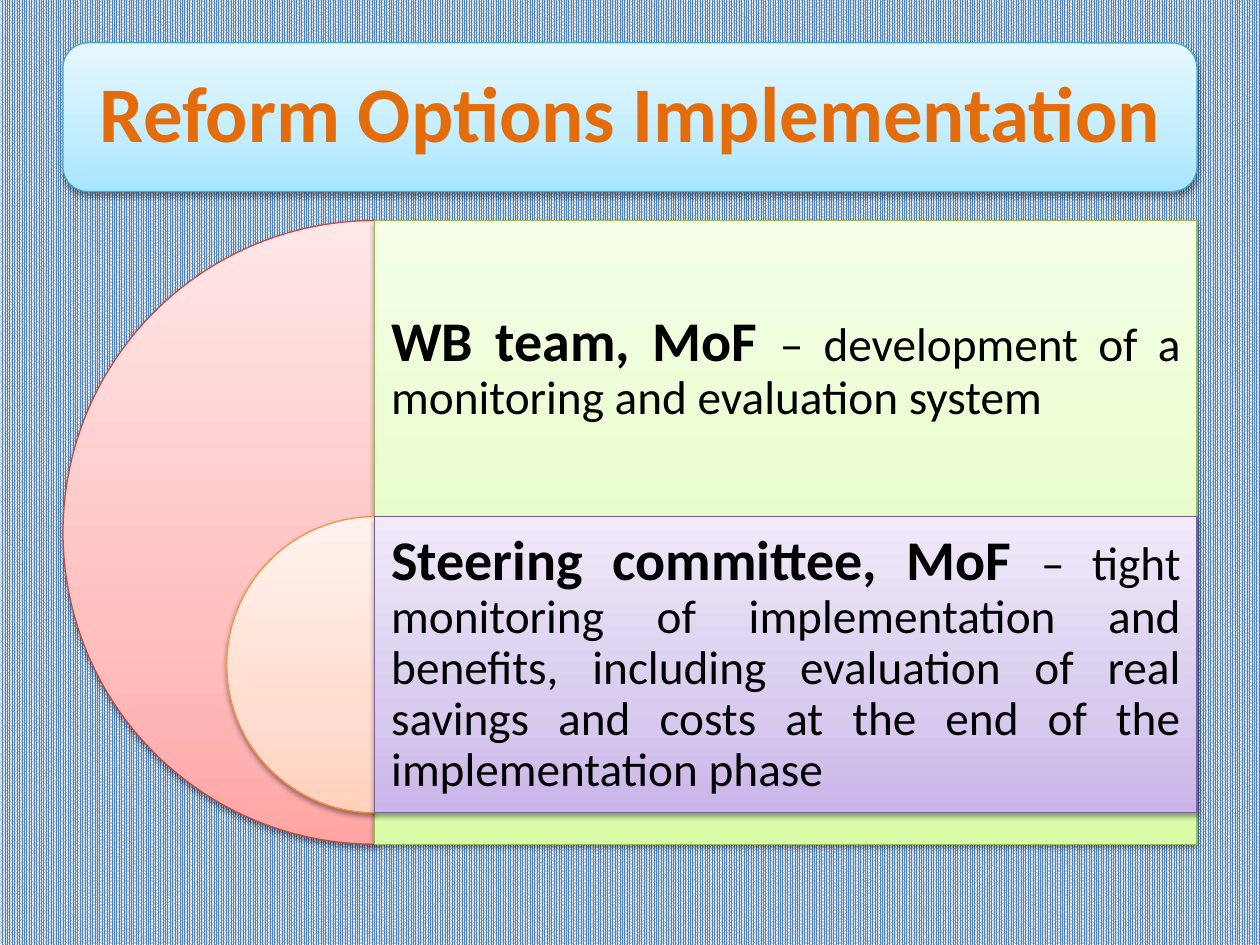
"""Build the reform options implementation slide."""
from pptx import Presentation, util as u
from pptx.dml.color import RGBColor
from pptx.enum import dml, shapes, text
from pptx.oxml import parse_xml
from pptx.oxml.ns import nsdecls

BLUE = RGBColor(0x4F, 0x81, 0xBD)
WHITE = RGBColor(0xFF, 0xFF, 0xFF)
ORANGE = RGBColor(0xE4, 0x6C, 0x0A)
BLACK = RGBColor(0, 0, 0)
TEAL_LINE = RGBColor(0x46, 0xAA, 0xC5)
RED_LINE = RGBColor(0xBF, 0x4C, 0x48)
GREEN_LINE = RGBColor(0x98, 0xB9, 0x55)
AMBER_LINE = RGBColor(0xF6, 0x92, 0x40)
PURPLE_LINE = RGBColor(0x7D, 0x60, 0xA0)
TEAL = [RGBColor.from_string(c) for c in ("A7E6FF", "C1EDFF", "E7F8FF")]
RED = [RGBColor.from_string(c) for c in ("FFA6A5", "FFC0BF", "FFE7E7")]
GREEN = [RGBColor.from_string(c) for c in ("DAFDA7", "E4FCC2", "F5FFE7")]
AMBER = [RGBColor.from_string(c) for c in ("FFD2BD", "FFDED0", "FFF2ED")]
PURPLE = [RGBColor.from_string(c) for c in ("C9B5E8", "D8CBEE", "F0EAF9")]

TITLE = "Reform Options Implementation"
LEVELS = [
    dict(lead="WB team, MoF ",
         detail="– development of a monitoring and evaluation system",
         size=4.95, pie=(RED, RED_LINE), panel=(GREEN, GREEN_LINE)),
    dict(lead="Steering committee, MoF ",
         detail="– tight monitoring of implementation and benefits, including "
                "evaluation of real savings and costs at the end of the "
                "implementation phase",
         size=2.35, pie=(AMBER, AMBER_LINE), panel=(PURPLE, PURPLE_LINE)),
]
LEFT, RIGHT, TOP, ROW = 0.5, 9.5, 1.75, 2.35
CENTER = LEFT + LEVELS[0]["size"] / 2
STOPS = (0, 35000, 100000)


def add_panel(s, kind, box, colors, line):
    sp = s.shapes.add_shape(kind, *map(u.Inches, box))
    sp.fill.gradient()
    stops = "".join(f'<a:gs pos="{pos}"><a:srgbClr val="{c}"/></a:gs>'
                    for pos, c in zip(STOPS, colors))
    old = sp._element.spPr.find(".//{*}gradFill")
    old.getparent().replace(old, parse_xml(
        f'<a:gradFill {nsdecls("a")} rotWithShape="1"><a:gsLst>{stops}</a:gsLst>'
        '<a:lin ang="16200000" scaled="0"/></a:gradFill>'))
    sp.line.color.rgb = line
    sp.line.width = u.Pt(0.75)
    sp.shadow.inherit = False
    sp._element.spPr.find("{*}effectLst").append(parse_xml(
        f'<a:outerShdw {nsdecls("a")} blurRad="40000" dist="20000" dir="5400000" '
        'rotWithShape="0"><a:srgbClr val="000000"><a:alpha val="38000"/>'
        '</a:srgbClr></a:outerShdw>'))
    return sp


def write(sp, runs, align, inset):
    tf = sp.text_frame
    tf.word_wrap = True
    tf.auto_size = text.MSO_AUTO_SIZE.NONE
    tf.vertical_anchor = text.MSO_ANCHOR.MIDDLE
    tf.margin_left = tf.margin_right = u.Inches(inset)
    tf.margin_top = tf.margin_bottom = u.Inches(inset)
    p = tf.paragraphs[0]
    p.alignment = align
    p.line_spacing = 0.9
    for words, size, bold, color in runs:
        r = p.add_run()
        r.text = words
        r.font.name = "Calibri"
        r.font.size = u.Pt(size)
        r.font.bold = bold
        r.font.color.rgb = color


def add_title(s):
    add_panel(s, shapes.MSO_SHAPE.ROUNDED_RECTANGLE,
              (LEFT, 0.34, RIGHT - LEFT, 1.18), TEAL, TEAL_LINE)
    title = s.shapes.title
    title.left, title.top, title.width, title.height = map(
        u.Inches, (0.56, 0.39, 8.88, 1.07))
    s.shapes._spTree.append(title._element)
    write(title, [(TITLE, 45, True, ORANGE)], text.PP_ALIGN.CENTER, 0.19)


def add_level(s, i, level):
    size, top, width = level["size"], TOP + i * ROW, RIGHT - CENTER
    pie = add_panel(s, shapes.MSO_SHAPE.PIE,
                    (CENTER - size / 2, top, size, size), *level["pie"])
    pie.adjustments[0], pie.adjustments[1] = 54, 162
    add_panel(s, shapes.MSO_SHAPE.RECTANGLE,
              (CENTER, top, width, size), *level["panel"])
    box = s.shapes.add_textbox(*map(u.Inches, (CENTER, top, width, ROW)))
    write(box, [(level["lead"], 32, True, BLACK),
                (level["detail"], 27, False, BLACK)],
          text.PP_ALIGN.JUSTIFY, 0.13)


def main():
    prs = Presentation()
    prs.slide_width, prs.slide_height = u.Inches(10), u.Inches(7.5)
    s = prs.slides.add_slide(prs.slide_layouts[5])
    fill = s.background.fill
    fill.patterned()
    fill.pattern = dml.MSO_PATTERN.PERCENT_90
    fill.fore_color.rgb = BLUE
    fill.back_color.rgb = WHITE
    add_title(s)
    for i, level in enumerate(LEVELS):
        add_level(s, i, level)
    prs.save("out.pptx")


if __name__ == "__main__":
    main()
